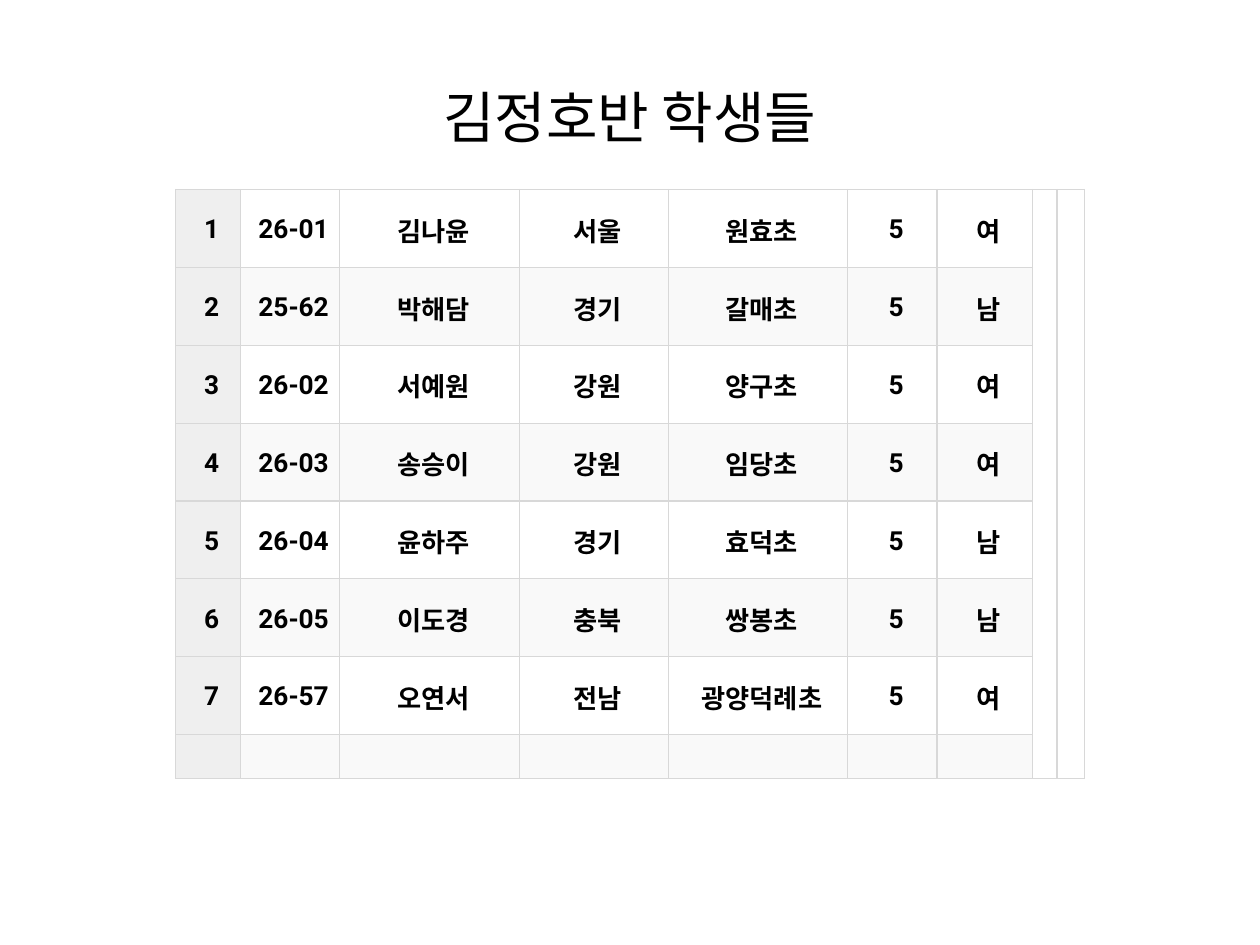
from lxml import etree
from pptx import Presentation
from pptx.dml.color import RGBColor
from pptx.enum.text import MSO_ANCHOR, PP_ALIGN
from pptx.oxml.ns import qn
from pptx.util import Cm, Pt

MIDDLE = MSO_ANCHOR.MIDDLE
CENTER = PP_ALIGN.CENTER
BLACK = RGBColor(0x00, 0x00, 0x00)
WHITE = RGBColor(0xFF, 0xFF, 0xFF)
BAND = RGBColor(0xF9, 0xF9, 0xF9)
NUMBER_GRAY = RGBColor(0xEF, 0xEF, 0xEF)
BORDER = RGBColor(0xD8, 0xD8, 0xD8)
HANGUL_FONT = "Noto Sans CJK KR"


def style_text(frame, size, font, bold):
    paragraph = frame.paragraphs[0]
    paragraph.alignment = CENTER
    for run in paragraph.runs:
        run.font.size = Pt(size)
        run.font.name = font
        run.font.bold = bold
        run.font.color.rgb = BLACK
        east_asian = etree.SubElement(run.font._element, qn("a:ea"))
        east_asian.set("typeface", HANGUL_FONT)


def add_borders(cell):
    properties = cell._tc.get_or_add_tcPr()
    for side in ("a:lnL", "a:lnR", "a:lnT", "a:lnB"):
        line = etree.SubElement(properties, qn(side), w=str(Pt(0.75)))
        fill = etree.SubElement(line, qn("a:solidFill"))
        etree.SubElement(fill, qn("a:srgbClr"), val=str(BORDER))


prs = Presentation()
prs.slide_width = Cm(25.4)
prs.slide_height = Cm(19.05)
slide = prs.slides.add_slide(prs.slide_layouts[6])

# Title
title = slide.shapes.add_textbox(Cm(1.27), Cm(0.76), Cm(22.86), Cm(3.18)).text_frame
title.word_wrap = True
title.vertical_anchor = MIDDLE
title.text = "김정호반 학생들"
style_text(title, 32, HANGUL_FONT, False)

# Students: id, name, region, school, grade, gender
students = [
    ("26-01", "김나윤", "서울", "원효초", "5", "여"),
    ("25-62", "박해담", "경기", "갈매초", "5", "남"),
    ("26-02", "서예원", "강원", "양구초", "5", "여"),
    ("26-03", "송승이", "강원", "임당초", "5", "여"),
    ("26-04", "윤하주", "경기", "효덕초", "5", "남"),
    ("26-05", "이도경", "충북", "쌍봉초", "5", "남"),
    ("26-57", "오연서", "전남", "광양덕례초", "5", "여"),
]
column_widths = [1.3, 2.01, 3.63, 3.0, 3.61, 1.8, 1.92, 0.5, 0.56]
row_heights = [1.57] * len(students) + [0.89]
data_columns = 7

# Roster table
roster = slide.shapes.add_table(
    len(row_heights), len(column_widths), Cm(3.54), Cm(3.82),
    Cm(sum(column_widths)), Cm(sum(row_heights))).table
roster.first_row = False
roster.horz_banding = False
for column, width in zip(roster.columns, column_widths):
    column.width = Cm(width)
for row, height in zip(roster.rows, row_heights):
    row.height = Cm(height)

# Borders, fills and margins
for r in range(len(row_heights)):
    for c in range(len(column_widths)):
        cell = roster.cell(r, c)
        add_borders(cell)
        cell.fill.solid()
        if c == 0:
            cell.fill.fore_color.rgb = NUMBER_GRAY
        elif c < data_columns and r % 2:
            cell.fill.fore_color.rgb = BAND
        else:
            cell.fill.fore_color.rgb = WHITE
        cell.vertical_anchor = MIDDLE
        has_text = r < len(students) and c < data_columns
        cell.margin_left = Cm(0.28 if has_text else 0)
        cell.margin_right = Cm(0.13 if has_text else 0)
        cell.margin_top = Cm(0.15 if has_text else 0)
        cell.margin_bottom = Cm(0.1 if has_text else 0)

# Student rows
for r, student in enumerate(students):
    for c, value in enumerate((str(r + 1), *student)):
        frame = roster.cell(r, c).text_frame
        frame.text = value
        style_text(frame, 15, "Roboto", True)

# Two empty columns at the right run the full height
for c in range(data_columns, len(column_widths)):
    roster.cell(0, c).merge(roster.cell(len(row_heights) - 1, c))

prs.save("out.pptx")
